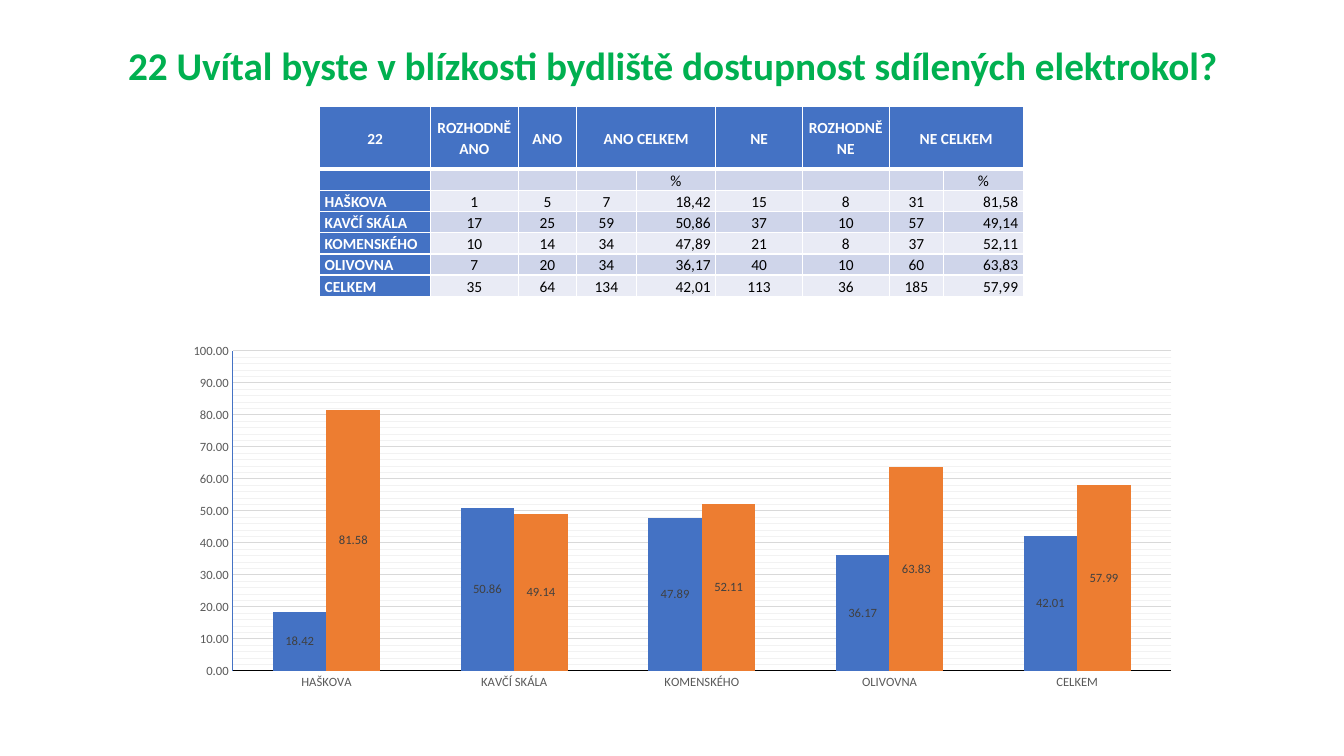
from lxml import etree
from pptx import Presentation
from pptx import util as u
from pptx.chart import data as chart_data
from pptx.dml import color
from pptx.enum import chart as charts, text
from pptx.oxml import ns

BLUE, ORANGE, WHITE, BLACK = "4472C4", "ED7D31", "FFFFFF", "000000"
BANDS = ("CFD5EA", "E9EBF5")

COLUMN_WIDTHS = (1.1, 0.87, 0.58, 0.59, 0.79, 0.86, 0.86, 0.54, 0.79)
ROW_HEIGHTS = (0.62,) + (0.21,) * 6
PERCENT_COLUMNS = (4, 8)
HEADER = ("22", "ROZHODNĚ ANO", "ANO", "ANO CELKEM", "", "NE", "ROZHODNĚ NE", "NE CELKEM", "")
UNITS = ("", "", "", "", "%", "", "", "", "%")
RESULTS = (
    ("HAŠKOVA", "1", "5", "7", "18,42", "15", "8", "31", "81,58"),
    ("KAVČÍ SKÁLA", "17", "25", "59", "50,86", "37", "10", "57", "49,14"),
    ("KOMENSKÉHO", "10", "14", "34", "47,89", "21", "8", "37", "52,11"),
    ("OLIVOVNA", "7", "20", "34", "36,17", "40", "10", "60", "63,83"),
    ("CELKEM", "35", "64", "134", "42,01", "113", "36", "185", "57,99"),
)


def rgb(value):
    return color.RGBColor.from_string(value)


def add_element(parent, tag, **attributes):
    return etree.SubElement(parent, ns.qn(tag), attributes)


def add_line(parent, tag, width, line_color):
    line = add_element(parent, tag, w=str(u.Pt(width)))
    add_element(add_element(line, "a:solidFill"), "a:srgbClr", val=line_color)


class SurveySlide:
    font_name = "Calibri"

    def __init__(self, presentation):
        self.slide = presentation.slides.add_slide(presentation.slide_layouts[5])

    def style(self, font, size, fill, bold=False):
        font.name, font.size, font.bold = self.font_name, u.Pt(size), bold
        font.color.rgb = rgb(fill)

    def title(self, wording, left, top, width, height):
        shape = self.slide.shapes.title
        shape.left, shape.top = u.Inches(left), u.Inches(top)
        shape.width, shape.height = u.Inches(width), u.Inches(height)
        frame = shape.text_frame
        frame.text = wording
        frame.word_wrap = True
        frame.auto_size = text.MSO_AUTO_SIZE.NONE
        frame.vertical_anchor = text.MSO_ANCHOR.MIDDLE
        paragraph = frame.paragraphs[0]
        paragraph.alignment = text.PP_ALIGN.CENTER
        self.style(paragraph.runs[0].font, 28, "00B050", True)

    def borders(self, cell, row):
        properties = cell._tc.get_or_add_tcPr()
        for side in ("L", "R", "T", "B"):
            thick = (row, side) in ((0, "B"), (1, "T"))
            add_line(properties, f"a:ln{side}", 3 if thick else 1, WHITE)

    def cell(self, cell, wording, row, column):
        heading = row == 0 or column == 0
        self.borders(cell, row)
        cell.fill.solid()
        cell.fill.fore_color.rgb = rgb(BLUE if heading else BANDS[(row - 1) % 2])
        cell.margin_left = cell.margin_right = u.Inches(0.05)
        cell.margin_top = cell.margin_bottom = 0
        cell.vertical_anchor = text.MSO_ANCHOR.BOTTOM if row else text.MSO_ANCHOR.MIDDLE
        cell.text_frame.text = wording
        paragraph = cell.text_frame.paragraphs[0]
        paragraph.line_spacing, paragraph.space_after = 1.07, u.Pt(8)
        paragraph.alignment = text.PP_ALIGN.CENTER
        if row and column == 0:
            paragraph.alignment = text.PP_ALIGN.LEFT
        elif row > 1 and column in PERCENT_COLUMNS:
            paragraph.alignment = text.PP_ALIGN.RIGHT
        for run in paragraph.runs:
            self.style(run.font, 11, WHITE if heading else BLACK, heading)
        if not wording:
            add_element(paragraph._p, "a:endParaRPr", sz="1100")

    def table(self, rows, left, top):
        table = self.slide.shapes.add_table(
            len(rows), len(COLUMN_WIDTHS), u.Inches(left), u.Inches(top),
            u.Inches(sum(COLUMN_WIDTHS)), u.Inches(sum(ROW_HEIGHTS))).table
        for column, width in zip(table.columns, COLUMN_WIDTHS):
            column.width = u.Inches(width)
        for row, height in zip(table.rows, ROW_HEIGHTS):
            row.height = u.Inches(height)
        for row, values in enumerate(rows):
            for column, wording in enumerate(values):
                self.cell(table.cell(row, column), wording, row, column)
        for column in PERCENT_COLUMNS:
            table.cell(0, column - 1).merge(table.cell(0, column))

    def axis(self, axis, line_color):
        axis.major_tick_mark = axis.minor_tick_mark = charts.XL_TICK_MARK.NONE
        axis.format.line.color.rgb = rgb(line_color)
        axis.format.line.width = u.Pt(0.75)
        self.style(axis.tick_labels.font, 9, "595959")

    def gridlines(self, axis):
        axis.has_major_gridlines = axis.has_minor_gridlines = True
        for kind, line_color in (("major", "D9D9D9"), ("minor", "F2F2F2")):
            gridlines = axis._element.find(ns.qn(f"c:{kind}Gridlines"))
            add_line(add_element(gridlines, "c:spPr"), "a:ln", 0.75, line_color)

    def plot_area(self, chart, x, y, w, h):
        area = chart._chartSpace.chart.plotArea
        for layout in area.findall(ns.qn("c:layout")):
            area.remove(layout)
        layout = etree.Element(ns.qn("c:layout"))
        area.insert(0, layout)
        manual = add_element(layout, "c:manualLayout")
        add_element(manual, "c:layoutTarget", val="inner")
        for mode in ("xMode", "yMode"):
            add_element(manual, f"c:{mode}", val="edge")
        for name, value in (("x", x), ("y", y), ("w", w), ("h", h)):
            add_element(manual, f"c:{name}", val=str(value))

    def chart(self, results, left, top, width, height):
        data = chart_data.CategoryChartData(number_format="0.00")
        data.categories = [row[0] for row in results]
        for number, column in enumerate(PERCENT_COLUMNS, 1):
            data.add_series(f"Series {number}",
                            [float(row[column].replace(",", ".")) for row in results])
        chart = self.slide.shapes.add_chart(
            charts.XL_CHART_TYPE.COLUMN_CLUSTERED, u.Inches(left), u.Inches(top),
            u.Inches(width), u.Inches(height), data).chart
        self.style(chart.font, 10, BLACK)
        chart.has_legend = chart.has_title = False
        self.plot_area(chart, 0.1, 0.07, 0.84, 0.79)

        # Axes and gridlines
        self.axis(chart.category_axis, BLACK)
        values = chart.value_axis
        self.axis(values, BLUE)
        values.minimum_scale, values.maximum_scale = 0, 100
        values.major_unit, values.minor_unit = 10, 2
        values.tick_labels.number_format = "0.00"
        values.tick_labels.number_format_is_linked = False
        self.gridlines(values)

        # Columns and their labels
        plot = chart.plots[0]
        plot.gap_width, plot.overlap, plot.vary_by_categories = 150, 0, False
        for series, fill in zip(plot.series, (BLUE, ORANGE)):
            series.format.fill.solid()
            series.format.fill.fore_color.rgb = rgb(fill)
            labels = series.data_labels
            labels.show_value = True
            labels.position = charts.XL_LABEL_POSITION.CENTER
            labels.number_format, labels.number_format_is_linked = "0.00", False
            self.style(labels.font, 9, "404040")


def main():
    presentation = Presentation()
    presentation.slide_width = u.Inches(13.33)
    presentation.slide_height = u.Inches(7.5)
    survey = SurveySlide(presentation)
    survey.title("22 Uvítal byste v blízkosti bydliště dostupnost sdílených elektrokol?",
                 0.92, 0.4, 11.5, 0.48)
    survey.table((HEADER, UNITS) + RESULTS, 3.17, 1.06)
    survey.chart(RESULTS, 1.2, 3.2, 11.08, 4.02)
    presentation.save("out.pptx")


if __name__ == "__main__":
    main()
